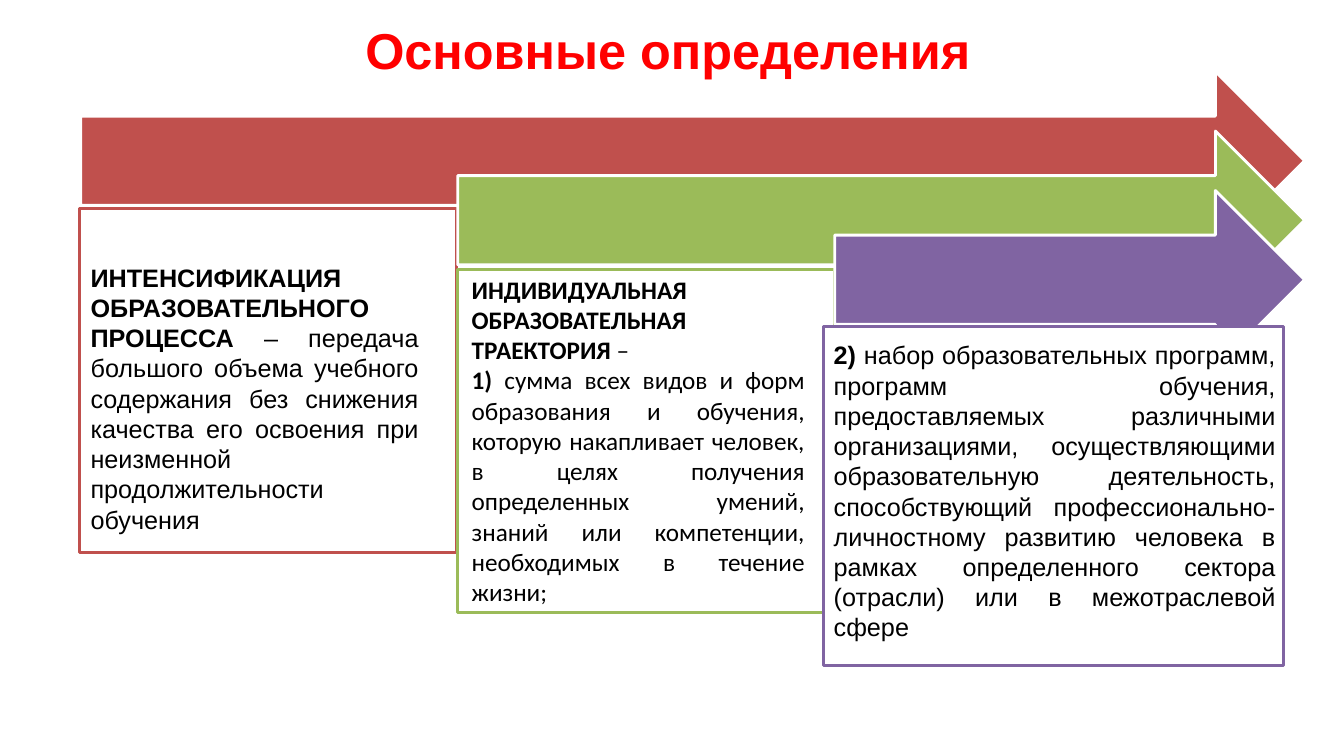
import pptx
import pptx.util
import pptx.dml.color
import pptx.enum.shapes
import pptx.enum.text

ALIGN = pptx.enum.text.PP_ALIGN
ANCHOR = pptx.enum.text.MSO_ANCHOR
SHAPE = pptx.enum.shapes.MSO_SHAPE

TITLE = "Основные определения"
STEPS = [
    {
        "color": "red", "font": "Arial",
        "panel": (79, 207, 374, 341), "text": (80, 255, 345, 283),
        "paragraphs": [
            (ALIGN.JUSTIFY, "ИНТЕНСИФИКАЦИЯ ОБРАЗОВАТЕЛЬНОГО ПРОЦЕССА ",
             "– передача большого объема учебного содержания без снижения качества "
             "его освоения при неизменной продолжительности обучения"),
        ],
    },
    {
        "color": "green", "font": "Calibri",
        "panel": (454, 267, 374, 341), "text": (458, 267, 350, 343),
        "paragraphs": [
            (ALIGN.LEFT, "ИНДИВИДУАЛЬНАЯ ОБРАЗОВАТЕЛЬНАЯ ТРАЕКТОРИЯ ", "–"),
            (ALIGN.JUSTIFY, "1) ",
             "сумма всех видов и форм образования и обучения, которую накапливает "
             "человек, в целях получения определенных умений, знаний или "
             "компетенции, необходимых в течение жизни;"),
        ],
    },
    {
        "color": "purple", "font": "Arial",
        "panel": (817, 324, 456, 336), "text": (817, 332, 458, 352),
        "paragraphs": [
            (ALIGN.JUSTIFY, "2) ",
             "набор образовательных программ, программ обучения, предоставляемых "
             "различными организациями, осуществляющими образовательную "
             "деятельность, способствующий профессионально-личностному развитию "
             "человека в рамках определенного сектора (отрасли) или в "
             "межотраслевой сфере"),
        ],
    },
]

THEME = {
    "red": "C0504D", "green": "9BBB59", "purple": "8064A2",
    "white": "FFFFFF", "black": "000000", "title": "FF0000",
    "title_size": 36, "body_size": 18, "line_width": 2,
}
PX = 9144
SLIDE = (1333, 750)
TITLE_BOX = (182, 18, 961, 61)
ARROW_LEFT, ARROW_TOP, ARROW_RIGHT, ARROW_HEIGHT = 80, 71, 1294, 177
ARROW_STEP_X, ARROW_STEP_Y = 374, 59


def emu(lengths):
    return [length * PX for length in lengths]


def color(name):
    return pptx.dml.color.RGBColor.from_string(THEME[name])


def apply(target, values):
    for name, value in values.items():
        setattr(target, name, value)


def add_block(page, kind, place, fill, line):
    block = page.shapes.add_shape(kind, *emu(place))
    block.shadow.inherit = False
    block.fill.solid()
    block.fill.fore_color.rgb = color(fill)
    block.line.color.rgb = color(line)
    block.line.width = pptx.util.Pt(THEME["line_width"])


def add_span(para, text, font, size, ink, bold):
    span = para.add_run()
    span.text = text
    apply(span.font, {"name": font, "size": pptx.util.Pt(THEME[size]), "bold": bold})
    span.font.color.rgb = color(ink)


def add_frame(page, place, **values):
    box = page.shapes.add_textbox(*emu(place))
    apply(box.text_frame, {"word_wrap": True, **values})
    return box.text_frame


def add_title(page):
    frame = add_frame(page, TITLE_BOX, vertical_anchor=ANCHOR.MIDDLE, margin_left=0,
                      margin_right=0, margin_top=0, margin_bottom=0)
    para = frame.paragraphs[0]
    para.alignment = ALIGN.CENTER
    add_span(para, TITLE, "Arial", "title_size", "title", True)


def add_definition(page, step):
    frame = add_frame(page, step["text"])
    for index, (alignment, term, meaning) in enumerate(step["paragraphs"]):
        para = frame.add_paragraph() if index else frame.paragraphs[0]
        para.alignment = alignment
        for text, bold in ((term, True), (meaning, False)):
            add_span(para, text, step["font"], "body_size", "black", bold)


def main():
    deck = pptx.Presentation()
    deck.slide_width, deck.slide_height = emu(SLIDE)
    page = deck.slides.add_slide(deck.slide_layouts[6])
    add_title(page)
    for index, step in enumerate(STEPS):
        left = ARROW_LEFT + index * ARROW_STEP_X
        top = ARROW_TOP + index * ARROW_STEP_Y
        arrow = (left, top, ARROW_RIGHT - left, ARROW_HEIGHT)
        add_block(page, SHAPE.RIGHT_ARROW, arrow, step["color"], "white")
        add_block(page, SHAPE.RECTANGLE, step["panel"], "white", step["color"])
    for step in STEPS:
        add_definition(page, step)
    deck.save("out.pptx")


if __name__ == "__main__":
    main()
